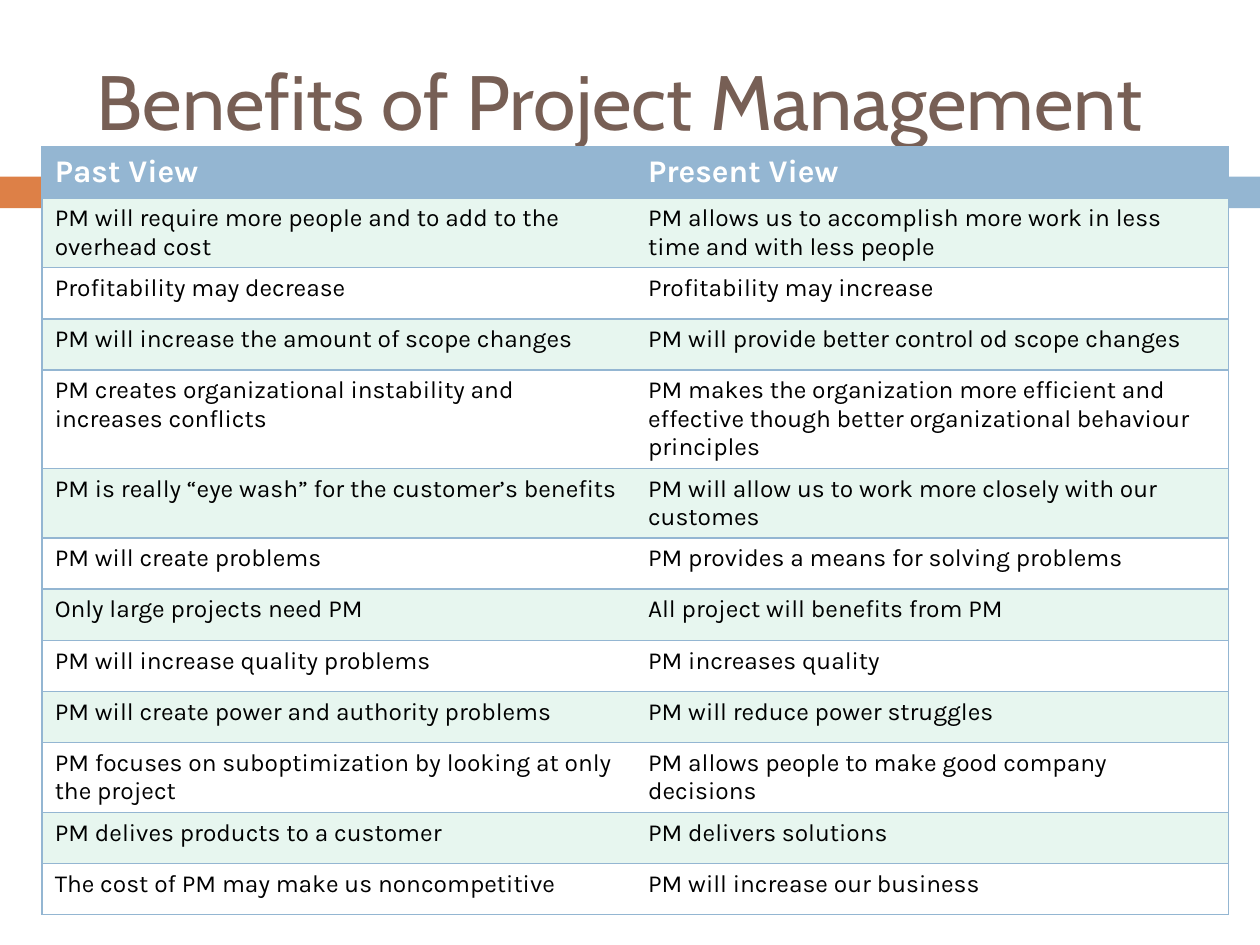
from lxml.etree import SubElement
from pptx import Presentation
from pptx.dml.color import RGBColor
from pptx.enum.shapes import MSO_SHAPE as SHAPE
from pptx.enum.text import MSO_ANCHOR as ANCHOR, PP_ALIGN as ALIGN
from pptx.oxml.ns import qn
from pptx.util import Cm, Pt

ORANGE = RGBColor(0xDD, 0x80, 0x47)
BLUE = RGBColor(0x94, 0xB6, 0xD2)
BROWN = RGBColor(0x77, 0x5F, 0x55)
MINT = RGBColor(0xE7, 0xF6, 0xEF)
WHITE = RGBColor(0xFF, 0xFF, 0xFF)
BLACK = RGBColor(0, 0, 0)

NO_GRID_STYLE = "{2D5ABB26-0587-4C30-8999-92F81FD0307C}"
BORDER_SIDES = (("lnL", "lnT", "lnB"), ("lnR", "lnT", "lnB"))

VIEWS = [
    ("Past View", "Present View"),
    ("PM will require more people and to add to the overhead cost",
     "PM allows us to accomplish more work in less time and with less people"),
    ("Profitability may decrease", "Profitability may increase"),
    ("PM will increase the amount of scope changes",
     "PM will provide better control od scope changes"),
    ("PM creates organizational instability and increases conflicts",
     "PM makes the organization more efficient and effective though better "
     "organizational behaviour principles"),
    ("PM is really “eye wash” for the customer’s benefits",
     "PM will allow us to work more closely with our customes"),
    ("PM will create problems", "PM provides a means for solving problems"),
    ("Only large projects need PM", "All project will benefits from PM"),
    ("PM will increase quality problems", "PM increases quality"),
    ("PM will create power and authority problems",
     "PM will reduce power struggles"),
    ("PM focuses on suboptimization by looking at only the project",
     "PM allows people to make good company decisions"),
    ("PM delives products to a customer", "PM delivers solutions"),
    ("The cost of PM may make us noncompetitive",
     "PM will increase our business"),
]


def set_font(p, name, size, color, bold=False):
    """Format a whole paragraph."""
    p.font.name = name
    p.font.size = Pt(size)
    p.font.color.rgb = color
    p.font.bold = bold


def add_band(s, left, top, width, height):
    """Draw the orange and blue strip with a small gap between its parts."""
    tab, gap = Cm(1.48), Cm(0.17)
    parts = ((left, tab, ORANGE),
             (left + tab + gap, width - tab - gap, BLUE))
    for x, w, color in parts:
        sp = s.shapes.add_shape(SHAPE.RECTANGLE, x, top, w, height)
        sp.shadow.inherit = False
        sp.fill.solid()
        sp.fill.fore_color.rgb = color
        sp.line.fill.background()


def place_title(s, left, top, width, height):
    """Move and format the title placeholder."""
    sp = s.shapes.title
    sp.left, sp.top, sp.width, sp.height = left, top, width, height
    tf = sp.text_frame
    tf.text = "Benefits of Project Management"
    tf.vertical_anchor = ANCHOR.MIDDLE
    p = tf.paragraphs[0]
    p.alignment = ALIGN.LEFT
    set_font(p, "Cabin", 44, BROWN)


def add_borders(cell, sides):
    """Give a cell thin blue borders on the named sides."""
    tcPr = cell._tc.get_or_add_tcPr()
    for side in sides:
        ln = SubElement(tcPr, qn(f"a:{side}"), w=str(Pt(1)))
        fill = SubElement(ln, qn("a:solidFill"))
        SubElement(fill, qn("a:srgbClr"), val=str(BLUE))


def add_views_table(s, left, top, width, row_height):
    """Add the two-column table comparing past and present views."""
    frame = s.shapes.add_table(len(VIEWS), 2, left, top, width,
                               row_height * len(VIEWS))
    table = frame.table
    table._tbl.tblPr.find(qn("a:tableStyleId")).text = NO_GRID_STYLE
    for i, row in enumerate(VIEWS):
        for j, text in enumerate(row):
            cell = table.cell(i, j)
            add_borders(cell, BORDER_SIDES[j])
            cell.fill.solid()
            cell.text = text
            p = cell.text_frame.paragraphs[0]
            if i == 0:
                cell.fill.fore_color.rgb = BLUE
                set_font(p, "Karla", 18, WHITE, bold=True)
            else:
                cell.fill.fore_color.rgb = MINT if i % 2 else WHITE
                set_font(p, "Karla", 14, BLACK)


def main():
    """Build the slide and save it."""
    prs = Presentation()
    prs.slide_width, prs.slide_height = Cm(25.4), Cm(19.05)
    s = prs.slides.add_slide(prs.slide_layouts[5])
    add_band(s, 0, Cm(3.56), prs.slide_width, Cm(0.64))
    place_title(s, Cm(1.7), Cm(0.64), Cm(22.65), Cm(2.74))
    add_views_table(s, Cm(0.85), Cm(2.96), Cm(23.92), Cm(1.03))
    prs.save("out.pptx")


if __name__ == "__main__":
    main()
